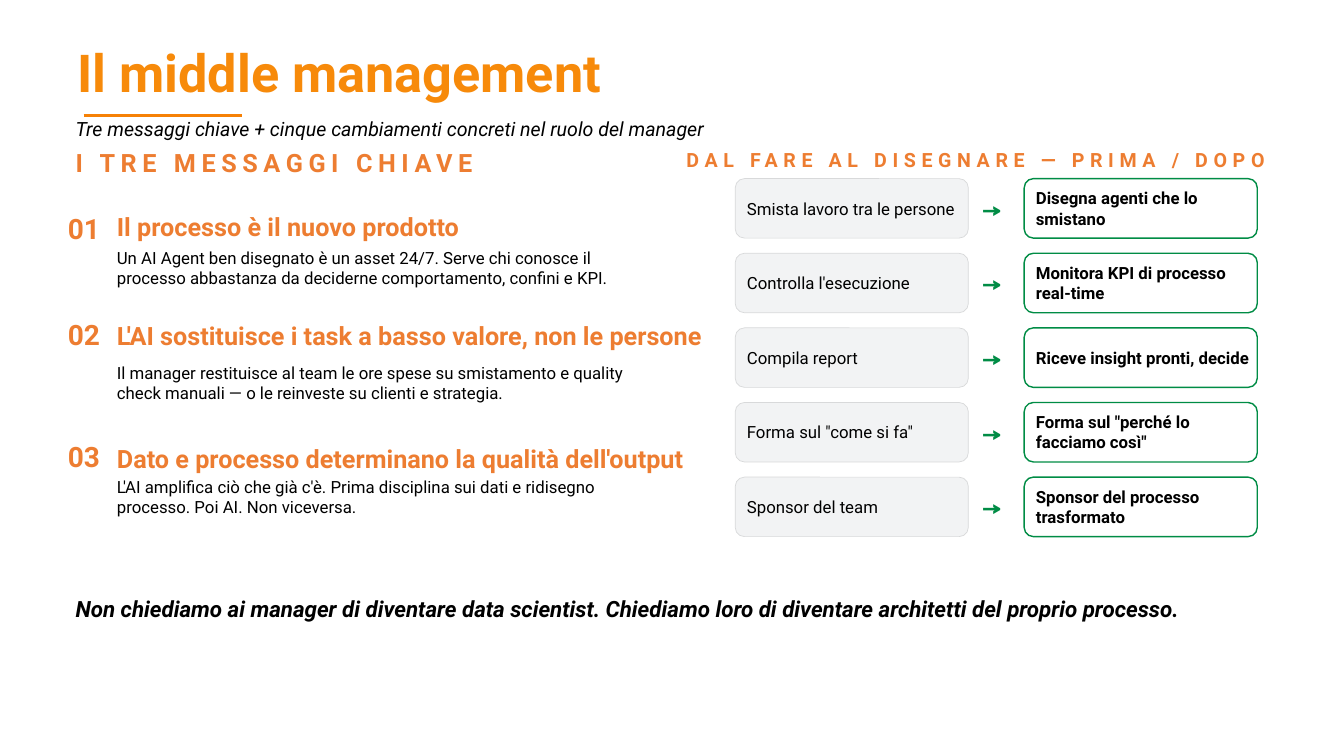
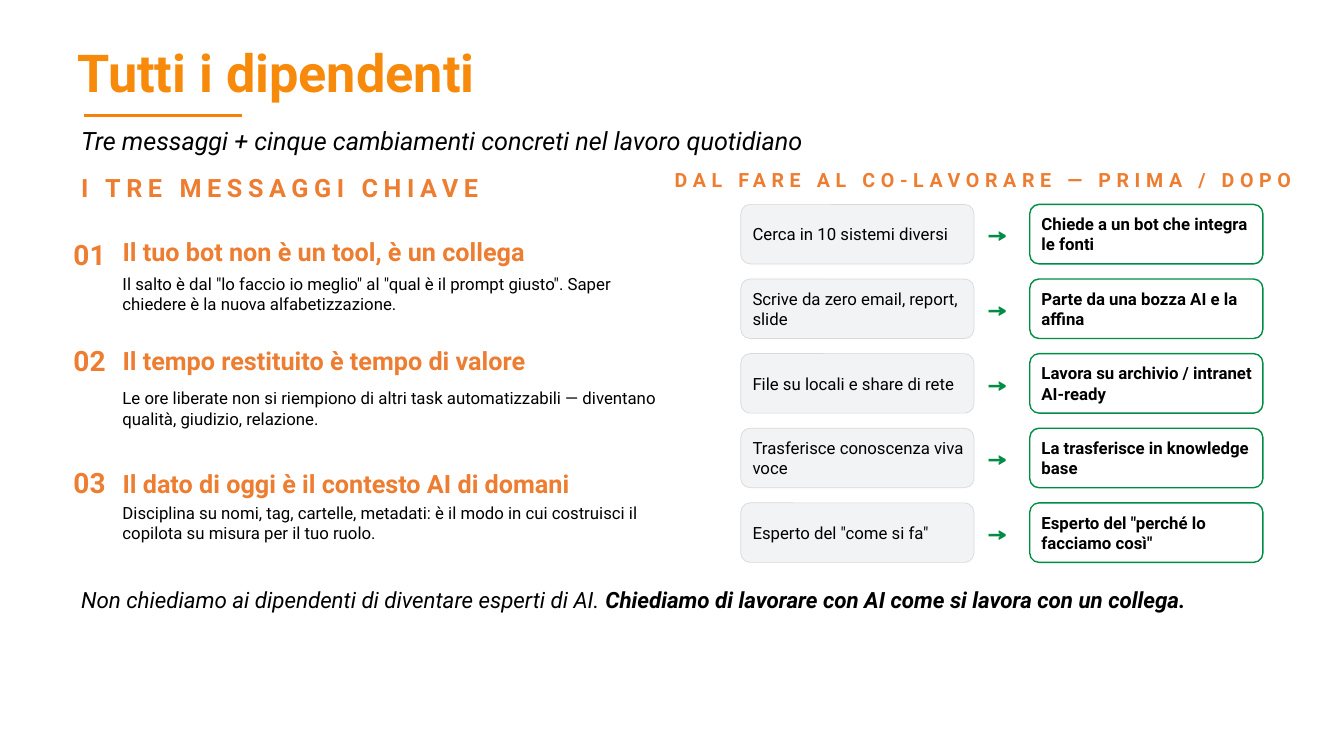
"""Two slides on how roles change: key messages beside before/after pairs."""
import pptx
import pptx.util
import pptx.dml.color
import pptx.enum.shapes
import pptx.enum.text
import lxml.etree

Pt = pptx.util.Pt
COLORS = {"title": "F78A0A", "rule": "F68106", "accent": "ED7D31", "text": "000000",
          "green": "008C45", "white": "FFFFFF", "gray": "F2F3F4", "edge": "D8D9DA"}
FONT = "Roboto"
ARROW_FONT = "TeX Gyre Adventor"

SLIDES = [
    {
        "title": "Il middle management",
        "subtitle": "Tre messaggi chiave + cinque cambiamenti concreti nel ruolo del manager",
        "subtitle_top": 74, "subtitle_size": 14,
        "left": 54, "messages_top": 105,
        "messages": [
            ("Il processo è il nuovo prodotto",
             "Un AI Agent ben disegnato è un asset 24/7. Serve chi conosce il processo "
             "abbastanza da deciderne comportamento, confini e KPI."),
            ("L'AI sostituisce i task a basso valore, non le persone",
             "Il manager restituisce al team le ore spese su smistamento e quality check "
             "manuali — o le reinveste su clienti e strategia."),
            ("Dato e processo determinano la qualità dell'output",
             "L'AI amplifica ciò che già c'è. Prima disciplina sui dati e ridisegno "
             "processo. Poi AI. Non viceversa."),
        ],
        "changes_title": "DAL FARE AL DISEGNARE — PRIMA / DOPO",
        "changes_title_at": (490.3, 103), "changes_top": 127.6,
        "changes": [
            ("Smista lavoro tra le persone", "Disegna agenti che lo smistano"),
            ("Controlla l'esecuzione", "Monitora KPI di processo real-time"),
            ("Compila report", "Riceve insight pronti, decide"),
            ("Forma sul \"come si fa\"", "Forma sul \"perché lo facciamo così\""),
            ("Sponsor del team", "Sponsor del processo trasformato"),
        ],
        "closing_top": 421.2,
        "closing": [("Non chiediamo ai manager di diventare data scientist. Chiediamo loro di "
                     "diventare architetti del proprio processo.", True)],
    },
    {
        "title": "Tutti i dipendenti",
        "subtitle": "Tre messaggi + cinque cambiamenti concreti nel lavoro quotidiano",
        "subtitle_top": 82.4, "subtitle_size": 18,
        "left": 58, "messages_top": 123.2,
        "messages": [
            ("Il tuo bot non è un tool, è un collega",
             "Il salto è dal \"lo faccio io meglio\" al \"qual è il prompt giusto\". Saper "
             "chiedere è la nuova alfabetizzazione."),
            ("Il tempo restituito è tempo di valore",
             "Le ore liberate non si riempiono di altri task automatizzabili — diventano "
             "qualità, giudizio, relazione."),
            ("Il dato di oggi è il contesto AI di domani",
             "Disciplina su nomi, tag, cartelle, metadati: è il modo in cui costruisci il "
             "copilota su misura per il tuo ruolo."),
        ],
        "changes_title": "DAL FARE AL CO-LAVORARE — PRIMA / DOPO",
        "changes_title_at": (481.9, 117.4), "changes_top": 146,
        "changes": [
            ("Cerca in 10 sistemi diversi", "Chiede a un bot che integra le fonti"),
            ("Scrive da zero email, report, slide", "Parte da una bozza AI e la affina"),
            ("File su locali e share di rete", "Lavora su archivio / intranet AI-ready"),
            ("Trasferisce conoscenza viva voce", "La trasferisce in knowledge base"),
            ("Esperto del \"come si fa\"", "Esperto del \"perché lo facciamo così\""),
        ],
        "closing_top": 414.7,
        "closing": [("Non chiediamo ai dipendenti di diventare esperti di AI. ", False),
                    ("Chiediamo di lavorare con AI come si lavora con un collega.", True)],
    },
]

MESSAGE_OFFSETS = [(44, 44, 50.5), (119.7, 121.8, 132.5), (206.6, 209.5, 214)]
CARD_WIDTH, CARD_HEIGHT, CARD_PITCH = 166.5, 42.5, 53.3


def rgb(name):
    return pptx.dml.color.RGBColor.from_string(COLORS[name])


def add_span(para, text, size, color="text", bold=False, italic=False, font=FONT, spacing=0):
    span = para.add_run()
    span.text = text
    span.font.name = font
    span.font.size = Pt(size)
    span.font.bold = bold
    span.font.italic = italic
    span.font.color.rgb = rgb(color)
    if spacing:
        span.font._element.set("spc", str(spacing * 100))


def set_frame(shape, insets=(0, 0, 0, 0)):
    frame = shape.text_frame
    frame.word_wrap = True
    frame.vertical_anchor = pptx.enum.text.MSO_ANCHOR.MIDDLE
    frame.margin_left, frame.margin_top, frame.margin_right, frame.margin_bottom = map(Pt, insets)
    para = frame.paragraphs[0]
    para.alignment = pptx.enum.text.PP_ALIGN.LEFT
    return para


def add_text(page, left, top, width, height, text="", size=12, insets=(0, 0, 0, 0), **style):
    box = page.shapes.add_textbox(Pt(left), Pt(top), Pt(width), Pt(height))
    para = set_frame(box, insets)
    if text:
        add_span(para, text, size, **style)
    return para


def add_card(page, left, top, text, fill, edge, line_width, bold):
    card = page.shapes.add_shape(pptx.enum.shapes.MSO_SHAPE.ROUNDED_RECTANGLE,
                                 Pt(left), Pt(top), Pt(CARD_WIDTH), Pt(CARD_HEIGHT))
    card.adjustments[0] = 0.156
    card.shadow.inherit = False
    card.fill.solid()
    card.fill.fore_color.rgb = rgb(fill)
    card.line.color.rgb = rgb(edge)
    card.line.width = Pt(line_width)
    add_span(set_frame(card, (6.4, 0, 1.2, 0)), text, 12, bold=bold)


def add_header(page, title):
    rule = page.shapes.add_connector(pptx.enum.shapes.MSO_CONNECTOR.STRAIGHT,
                                     Pt(59.8), Pt(82.8), Pt(172.8), Pt(82.8))
    rule.line.color.rgb = rgb("rule")
    rule.line.width = Pt(2.25)
    namespace = "{http://schemas.openxmlformats.org/drawingml/2006/main}"
    lxml.etree.SubElement(rule._element.spPr, namespace + "effectLst")
    para = add_text(page, 48.2, 25.9, 837.4, 56.2, title, 37.3,
                    insets=(7.2, 3.6, 7.2, 3.6), color="title", bold=True)
    para.line_spacing = 0.9


def add_messages(page, left, top, messages):
    add_text(page, left, top, 432, 21.6, "I TRE MESSAGGI CHIAVE", 18,
             color="accent", bold=True, spacing=4)
    for number, ((heading, body), offsets) in enumerate(zip(messages, MESSAGE_OFFSETS), 1):
        number_top, heading_top, body_top = (top + offset for offset in offsets)
        add_text(page, left - 5.5, number_top, 43.2, 28.8, f"{number:02}", 20,
                 color="accent", bold=True)
        add_text(page, left + 29.5, heading_top, 459, 25.2, heading, 18,
                 color="accent", bold=True)
        add_text(page, left + 29.5, body_top, 381.6, 72, body)


def add_changes(page, left, top, changes):
    for row, (before, after) in enumerate(changes):
        row_top = top + row * CARD_PITCH
        add_card(page, left, row_top, before, "gray", "edge", 0.5, False)
        arrow = add_text(page, left + 174.2, row_top, 18, CARD_HEIGHT, "→", 14,
                         color="green", bold=True, font=ARROW_FONT)
        arrow.alignment = pptx.enum.text.PP_ALIGN.CENTER
        add_card(page, left + 206.4, row_top, after, "white", "green", 1, True)


def build_slide(deck, content):
    page = deck.slides.add_slide(deck.slide_layouts[6])
    left = content["left"]
    add_header(page, content["title"])
    add_text(page, left, content["subtitle_top"], 885.6, 36, content["subtitle"],
             content["subtitle_size"], italic=True)
    add_messages(page, left, content["messages_top"], content["messages"])
    add_text(page, *content["changes_title_at"], 470, 21.6, content["changes_title"], 14,
             color="accent", bold=True, spacing=4)
    add_changes(page, left + 471.2, content["changes_top"], content["changes"])
    closing = add_text(page, left, content["closing_top"], 871, 27.4)
    for text, bold in content["closing"]:
        add_span(closing, text, 16, bold=bold, italic=True)


def main():
    deck = pptx.Presentation()
    deck.slide_width, deck.slide_height = Pt(960), Pt(540)
    for content in SLIDES:
        build_slide(deck, content)
    deck.save("out.pptx")


if __name__ == "__main__":
    main()
